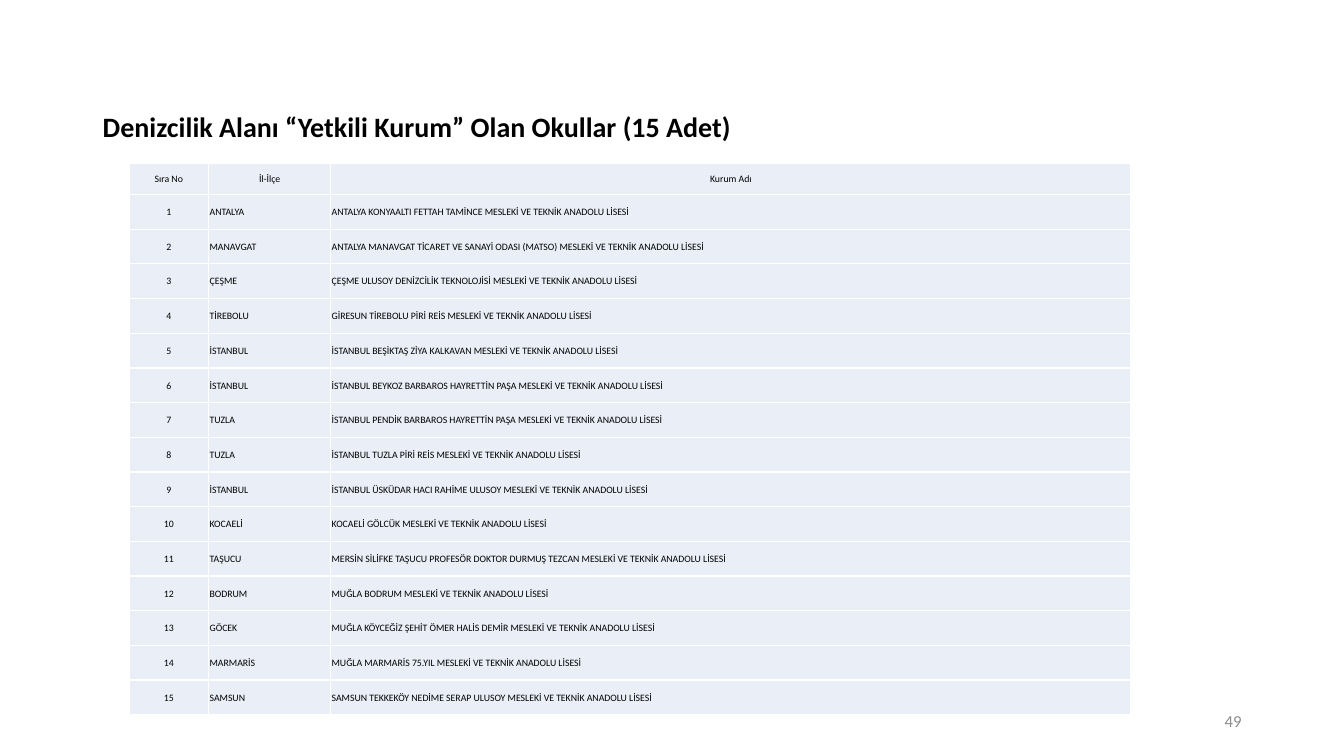
from dataclasses import dataclass

from lxml.etree import SubElement
from pptx import Presentation
from pptx.dml.color import RGBColor
from pptx.enum.text import MSO_ANCHOR, PP_ALIGN
from pptx.oxml.ns import qn
from pptx.util import Inches, Pt


@dataclass(frozen=True)
class Theme:
    font: str = "Calibri"
    ink: str = "000000"
    muted: str = "8C8C8C"
    cell: str = "EAEFF7"
    border: str = "FFFFFF"
    title_size: int = 20
    number_size: int = 12
    table_size: int = 7
    border_width: int = 1


THEME = Theme()
SLIDE_W, SLIDE_H = Inches(13.33), Inches(7.5)

# Positions and sizes in percent of the slide: left, top, width, height
TITLE_AREA = (6.9, 7.33, 86.25, 19.33)
NUMBER_AREA = (70.63, 92.67, 22.5, 5.33)
TABLE_LEFT, TABLE_TOP = 9.6, 21.6
COLUMN_WIDTHS = (5.93, 9.08, 59.55)
HEADER_HEIGHT, ROW_HEIGHT = 4.13, 4.59

HEADER = ("Sıra No", "İl-İlçe", "Kurum Adı")
SCHOOL_TYPE = "MESLEKİ VE TEKNİK ANADOLU LİSESİ"
SCHOOLS = [
    ("ANTALYA", "ANTALYA KONYAALTI FETTAH TAMİNCE"),
    ("MANAVGAT", "ANTALYA MANAVGAT TİCARET VE SANAYİ ODASI (MATSO)"),
    ("ÇEŞME", "ÇEŞME ULUSOY DENİZCİLİK TEKNOLOJİSİ"),
    ("TİREBOLU", "GİRESUN TİREBOLU PİRİ REİS"),
    ("İSTANBUL", "İSTANBUL BEŞİKTAŞ ZİYA KALKAVAN"),
    ("İSTANBUL", "İSTANBUL BEYKOZ BARBAROS HAYRETTİN PAŞA"),
    ("TUZLA", "İSTANBUL PENDİK BARBAROS HAYRETTİN PAŞA"),
    ("TUZLA", "İSTANBUL TUZLA PİRİ REİS"),
    ("İSTANBUL", "İSTANBUL ÜSKÜDAR HACI RAHİME ULUSOY"),
    ("KOCAELİ", "KOCAELİ GÖLCÜK"),
    ("TAŞUCU", "MERSİN SİLİFKE TAŞUCU PROFESÖR DOKTOR DURMUŞ TEZCAN"),
    ("BODRUM", "MUĞLA BODRUM"),
    ("GÖCEK", "MUĞLA KÖYCEĞİZ ŞEHİT ÖMER HALİS DEMİR"),
    ("MARMARİS", "MUĞLA MARMARİS 75.YIL"),
    ("SAMSUN", "SAMSUN TEKKEKÖY NEDİME SERAP ULUSOY"),
]


def across(percent):
    return round(SLIDE_W * percent / 100)


def down(percent):
    return round(SLIDE_H * percent / 100)


def write(tf, text, size, color, align=PP_ALIGN.LEFT, bold=False):
    p = tf.paragraphs[0]
    p.text = text
    p.alignment = align
    r = p.runs[0]
    r.font.name = THEME.font
    r.font.size = Pt(size)
    r.font.bold = bold
    r.font.color.rgb = RGBColor.from_string(color)
    return p


def add_text(slide, area, text, size, color, **style):
    left, top, width, height = area
    sp = slide.shapes.add_textbox(across(left), down(top), across(width), down(height))
    tf = sp.text_frame
    tf.word_wrap = True
    tf.vertical_anchor = MSO_ANCHOR.MIDDLE
    return write(tf, text, size, color, **style)


def set_borders(cell):
    tc_pr = cell._tc.get_or_add_tcPr()
    for side in ("a:lnL", "a:lnR", "a:lnT", "a:lnB"):
        ln = SubElement(tc_pr, qn(side), w=str(Pt(THEME.border_width)))
        fill = SubElement(ln, qn("a:solidFill"))
        SubElement(fill, qn("a:srgbClr"), val=THEME.border)


def fill_cell(cell, text, align):
    cell.margin_left = cell.margin_right = cell.margin_top = Inches(0.01)
    cell.margin_bottom = 0
    cell.vertical_anchor = MSO_ANCHOR.MIDDLE
    set_borders(cell)
    cell.fill.solid()
    cell.fill.fore_color.rgb = RGBColor.from_string(THEME.cell)
    write(cell.text_frame, text, THEME.table_size, THEME.ink, align)


def add_school_table(slide):
    rows = [HEADER] + [
        (str(number), town, f"{name} {SCHOOL_TYPE}")
        for number, (town, name) in enumerate(SCHOOLS, 1)
    ]
    heights = [HEADER_HEIGHT] + [ROW_HEIGHT] * len(SCHOOLS)
    table = slide.shapes.add_table(
        len(rows), len(HEADER), across(TABLE_LEFT), down(TABLE_TOP),
        across(sum(COLUMN_WIDTHS)), down(sum(heights))).table
    table.first_row = table.horz_banding = False
    for column, width in zip(table.columns, COLUMN_WIDTHS):
        column.width = across(width)
    for i, (values, height) in enumerate(zip(rows, heights)):
        table.rows[i].height = down(height)
        for j, text in enumerate(values):
            # The header row and the number column are centred
            centred = i == 0 or j == 0
            fill_cell(table.cell(i, j), text,
                      PP_ALIGN.CENTER if centred else PP_ALIGN.LEFT)


def main():
    prs = Presentation()
    prs.slide_width, prs.slide_height = SLIDE_W, SLIDE_H
    slide = prs.slides.add_slide(prs.slide_layouts[6])

    # Title
    title = add_text(slide, TITLE_AREA,
                     "Denizcilik Alanı “Yetkili Kurum” Olan Okullar (15 Adet)",
                     THEME.title_size, THEME.ink, bold=True)
    title.line_spacing = 0.9

    # Slide number
    add_text(slide, NUMBER_AREA, "49", THEME.number_size, THEME.muted,
             align=PP_ALIGN.RIGHT)

    # Authorised schools
    add_school_table(slide)

    prs.save("out.pptx")


if __name__ == "__main__":
    main()
